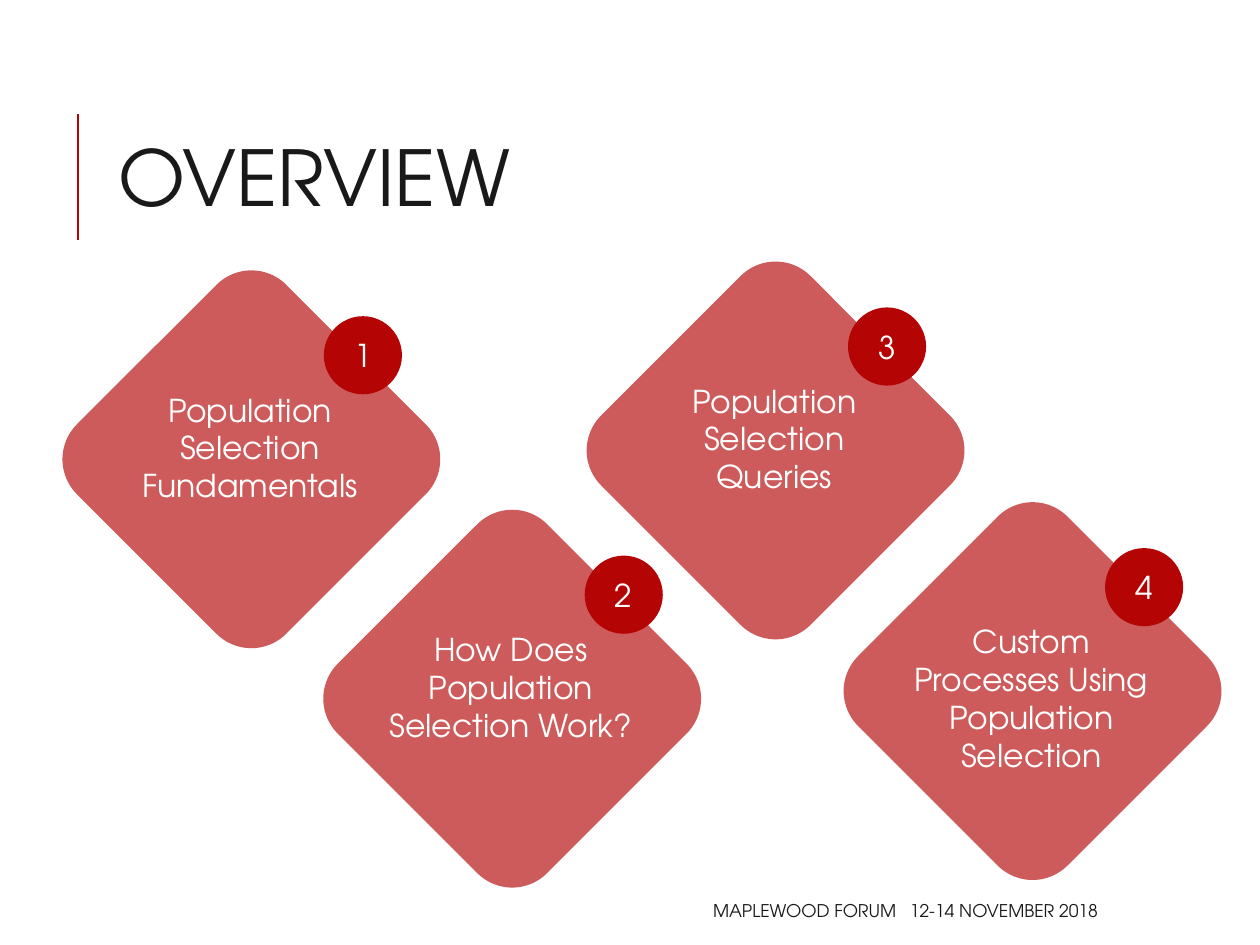
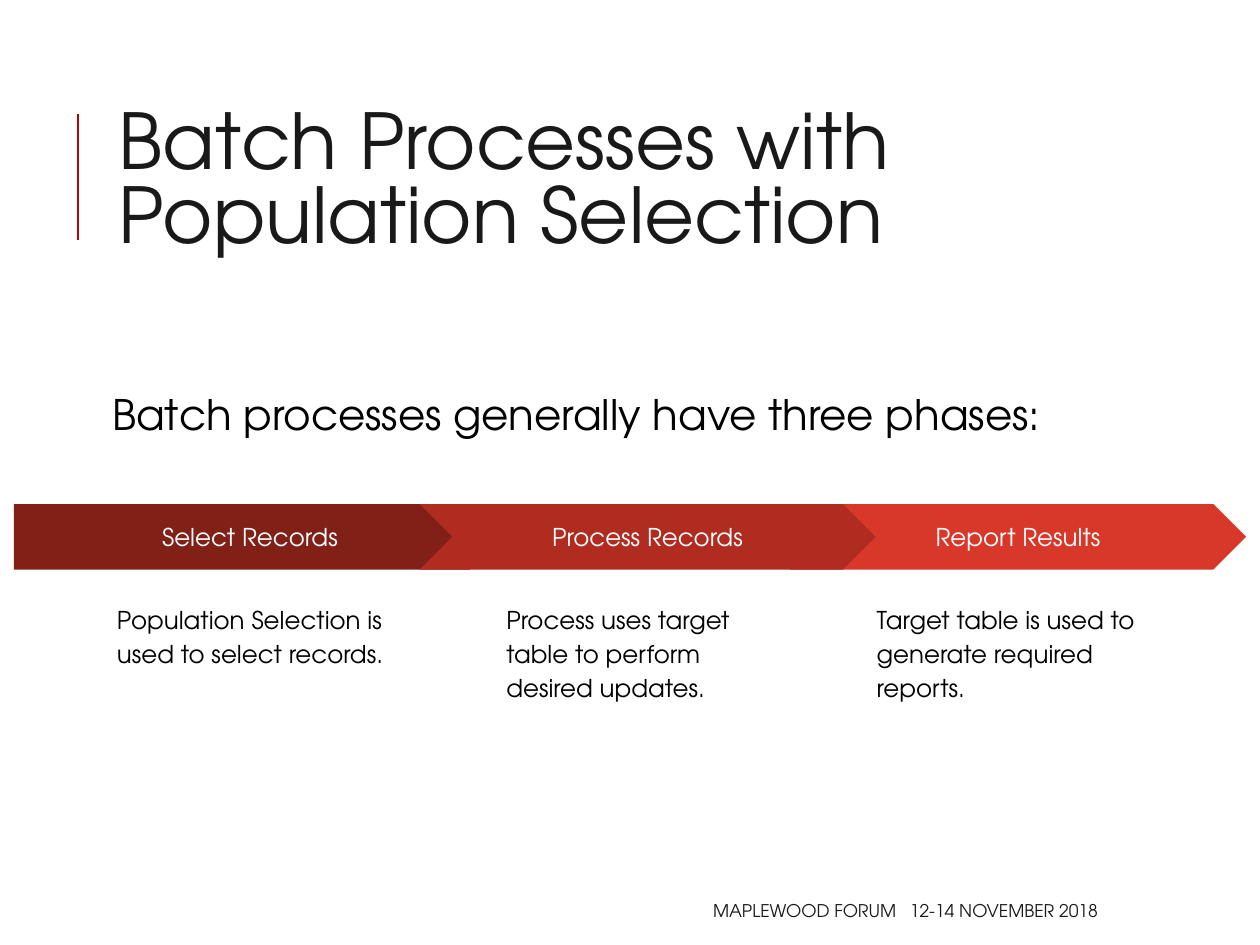
from collections import namedtuple

from lxml.etree import SubElement
from pptx import Presentation
from pptx.dml.color import RGBColor
from pptx.enum.shapes import MSO_CONNECTOR, MSO_SHAPE
from pptx.enum.text import MSO_ANCHOR, PP_ALIGN
from pptx.oxml.ns import qn
from pptx.util import Inches, Pt

FONT = "TeX Gyre Adventor"
COLORS = {
    "accent": "B40404",
    "title": "191919",
    "body": "000000",
    "light": "FFFFFF",
    "select": "802017",
    "process": "B02C20",
    "report": "D83829",
}
# The page is a grid of square cells; every length below counts cells.
COLUMNS, ROWS = 100, 75
CELL = Inches(0.1)

Box = namedtuple("Box", "left top width height")
PAGE = Box(0, 0, COLUMNS, ROWS)


def inside(box, left, top, width, height):
    """Return a box placed relative to the corner of another one."""
    return Box(box.left + left, box.top + top, width, height)


def emu(box):
    return [round(length * CELL) for length in box]


def color(name):
    return RGBColor.from_string(COLORS[name])


def write(shape, text, size, ink, align=PP_ALIGN.LEFT, anchor=MSO_ANCHOR.TOP,
          line_spacing=None, side=1, edge=0.5):
    """Fill a shape with one styled paragraph; side and edge are its margins."""
    frame = shape.text_frame
    frame.text = text
    frame.word_wrap = True
    frame.vertical_anchor = anchor
    frame.margin_left = frame.margin_right = round(side * CELL)
    frame.margin_top = frame.margin_bottom = round(edge * CELL)
    para = frame.paragraphs[0]
    para.alignment = align
    if line_spacing:
        para.line_spacing = line_spacing
    for span in para.runs:
        span.font.name = FONT
        span.font.size = Pt(size)
        span.font.color.rgb = color(ink)


def add_text(page, box, text, size, ink, **style):
    write(page.shapes.add_textbox(*emu(box)), text, size, ink, **style)


def add_filled(page, kind, box, fill, opacity=None):
    shape = page.shapes.add_shape(kind, *emu(box))
    shape.shadow.inherit = False
    shape.fill.solid()
    shape.fill.fore_color.rgb = color(fill)
    shape.line.fill.background()
    if opacity:
        tint = shape.fill._xPr.find(".//" + qn("a:srgbClr"))
        SubElement(tint, qn("a:alpha")).set("val", str(opacity * 1000))
    return shape


def add_heading(page, box, text):
    """Draw the title and the accent rule to its left."""
    rule_x = round((box.left - 2.2) * CELL)
    top = round((box.top + 2.65) * CELL)
    rule = page.shapes.add_connector(
        MSO_CONNECTOR.STRAIGHT, rule_x, top + 10 * CELL, rule_x, top)
    rule.line.color.rgb = color("accent")
    rule.line.width = Pt(1.5)
    SubElement(rule._element.spPr, qn("a:effectLst"))
    add_text(page, box, text, 44, "title",
             anchor=MSO_ANCHOR.MIDDLE, line_spacing=0.8)


def add_footer(page, box):
    """Set the event name and its date side by side, each flush right."""
    name_width, date_width = 32.4, 18.1
    parts = [
        (0, name_width, "MAPLEWOOD FORUM"),
        (box.width - date_width, date_width, "12-14 NOVEMBER 2018"),
    ]
    for left, width, text in parts:
        add_text(page, inside(box, left, 0, width, box.height), text, 10,
                 "title", align=PP_ALIGN.RIGHT, anchor=MSO_ANCHOR.MIDDLE)


def add_page(deck, title, title_width):
    page = deck.slides.add_slide(deck.slide_layouts[6])
    add_heading(page, inside(PAGE, 8.4, 6.4, title_width, 16.4), title)
    return page


def add_topic(page, box, number, text):
    """Draw a diamond with its caption and numbered badge."""
    diamond = add_filled(page, MSO_SHAPE.ROUNDED_RECTANGLE, box, "accent", 65)
    diamond.adjustments[0] = 0.167
    diamond.rotation = 45
    badge = add_filled(page, MSO_SHAPE.OVAL,
                       inside(box, 17.5, 0.4, 6.2, 6.2), "accent")
    write(badge, str(number), 18, "light",
          align=PP_ALIGN.CENTER, anchor=MSO_ANCHOR.MIDDLE)
    add_text(page, inside(box, 0.4, 5.8, 22.5, 13.1), text, 18, "light",
             align=PP_ALIGN.CENTER)


def add_phase(page, box, kind, fill, label, detail, indent, detail_width):
    """Draw an arrow band with its explanation below."""
    band = add_filled(page, kind, box, fill)
    band.adjustments[0] = 0.5
    write(band, label, 14, "light", align=PP_ALIGN.CENTER,
          anchor=MSO_ANCHOR.MIDDLE, edge=1)
    add_text(page, inside(box, indent, 6.7, detail_width, 13.1), detail, 14,
             "body", line_spacing=1.15, edge=1)


def build_overview(deck):
    page = add_page(deck, "OVERVIEW", 79.7)
    topics = [
        (8.2, 24.7, "Population Selection Fundamentals"),
        (28.9, 43.7, "How Does Population Selection Work?"),
        (49.8, 24, "Population Selection Queries"),
        (70.2, 43.1, "Custom Processes Using Population Selection"),
    ]
    for number, (left, top, text) in enumerate(topics, 1):
        add_topic(page, inside(PAGE, left, top, 23.5, 23.5), number, text)
    return page


def build_phases(deck):
    page = add_page(deck, "Batch Processes with Population Selection", 89.1)
    add_text(page, inside(PAGE, 8.4, 30.8, 79.7, 44),
             "Batch processes generally have three phases:", 24, "body",
             line_spacing=0.9, side=0.5)
    strip = inside(PAGE, 1.1, 40, 97.8, 5.2)
    first, pitch = 32.2, 29.4
    # The middle band comes last, as it overlaps both neighbours.
    add_phase(page, inside(strip, first + pitch, 0, 36.2, 5.2),
              MSO_SHAPE.CHEVRON, "report", "Report Results",
              "Target table is used to generate required reports.", 5.9, 24.5)
    add_phase(page, inside(strip, 0, 0, 38.8, 5.2),
              MSO_SHAPE.PENTAGON, "select", "Select Records",
              "Population Selection is used to select records.", 7.2, 27.2)
    add_phase(page, inside(strip, first, 0, 36.2, 5.2),
              MSO_SHAPE.CHEVRON, "process", "Process Records",
              "Process uses target table to perform desired updates.", 5.9, 24.5)
    return page


def main():
    deck = Presentation()
    deck.slide_width = COLUMNS * CELL
    deck.slide_height = ROWS * CELL
    for build in (build_overview, build_phases):
        add_footer(build(deck), inside(PAGE, 39.7, 70.8, 48.4, 3))
    deck.save("out.pptx")


if __name__ == "__main__":
    main()
